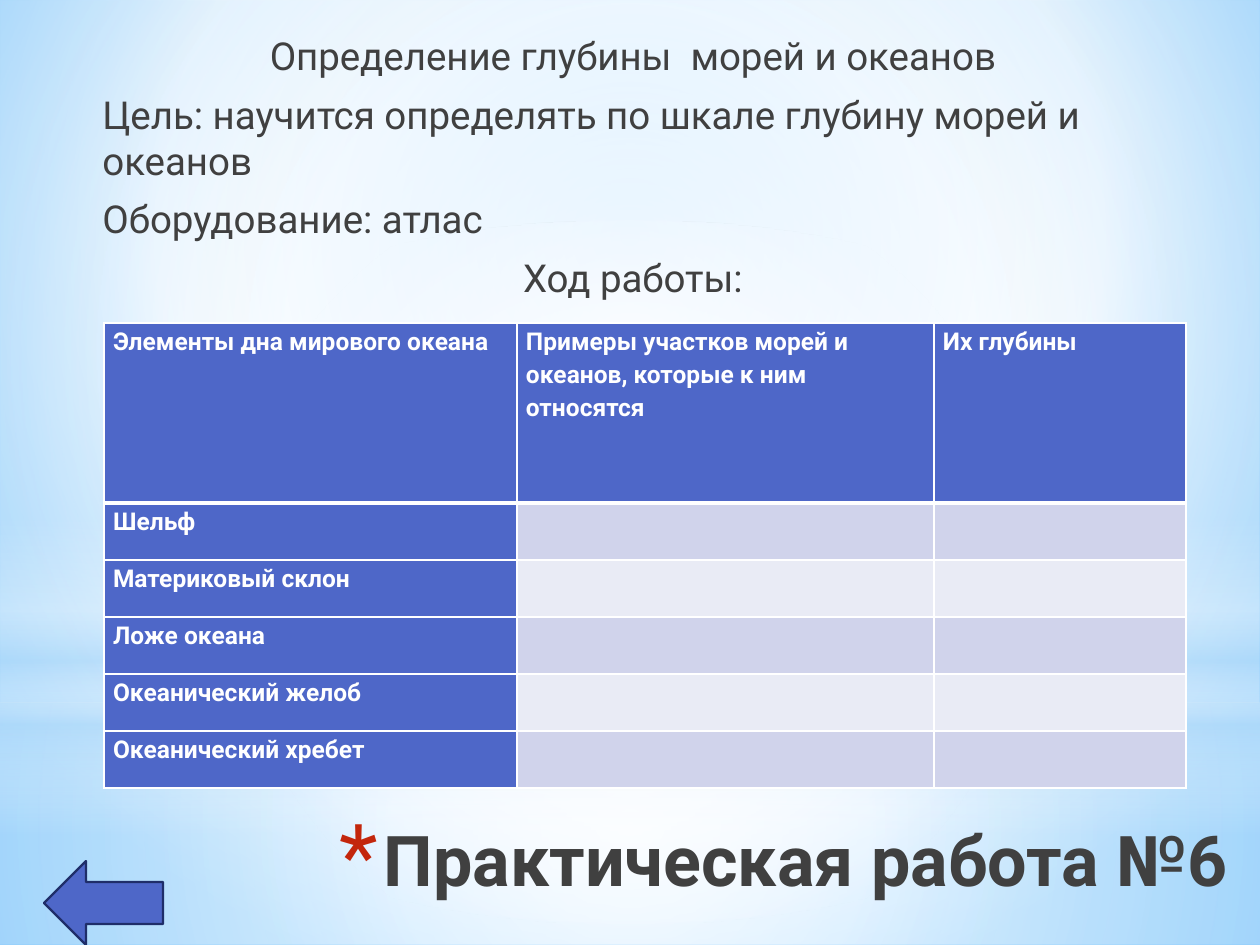
"""Build the slide of practical work No. 6 on the depth of seas and oceans."""
from pptx import Presentation
from pptx.dml.color import RGBColor
from pptx.enum.shapes import MSO_SHAPE
from pptx.enum.text import MSO_ANCHOR, PP_ALIGN
from pptx.oxml import parse_xml
from pptx.oxml.ns import nsdecls, qn
from pptx.util import Pt

RECTANGLE, OVAL, LEFT_ARROW = MSO_SHAPE.RECTANGLE, MSO_SHAPE.OVAL, MSO_SHAPE.LEFT_ARROW
LEFT, CENTER, RIGHT = PP_ALIGN.LEFT, PP_ALIGN.CENTER, PP_ALIGN.RIGHT
TOP = MSO_ANCHOR.TOP
PX = 914400 / 126
COLORS = {
    "white": "FFFFFF", "haze": "B4DCFA", "sky": "9ED5FF", "deep sky": "5BB9FF",
    "text": "404040", "asterisk": "C3260C", "accent": "4E67C8", "outline": "1F2E69",
    "odd band": "D0D3EB", "even band": "E9EBF5",
}
CENTERED = (50, 50, 50, 50)


def apply_gradient(fill, element, stops, focus):
    """Give a fill a circular gradient, or a vertical one when focus is None."""
    fill.gradient()
    stop_xml = "".join(
        f'<a:gs pos="{position * 1000}"><a:srgbClr val="{COLORS[color]}">'
        f'<a:alpha val="{alpha * 1000}"/></a:srgbClr></a:gs>'
        for position, color, alpha in stops)
    if focus:
        sides = " ".join(f'{side}="{value * 1000}"' for side, value in zip("ltrb", focus))
        direction = f'<a:path path="circle"><a:fillToRect {sides}/></a:path>'
    else:
        direction = '<a:lin ang="5400000" scaled="0"/>'
    gradient = element.find(".//" + qn("a:gradFill"))
    gradient.getparent().replace(gradient, parse_xml(
        f'<a:gradFill {nsdecls("a")} rotWithShape="1"><a:gsLst>{stop_xml}</a:gsLst>'
        f'{direction}</a:gradFill>'))


def write(paragraph, text, color, **formats):
    """Add a run of text in the slide font."""
    font = paragraph.add_run().font
    paragraph.runs[0].text = text
    for name, value in {"name": "Roboto", **formats}.items():
        setattr(font, name, value)
    font.color.rgb = RGBColor.from_string(COLORS[color])


presentation = Presentation()
presentation.slide_width, presentation.slide_height = round(1260 * PX), round(945 * PX)
slide = presentation.slides.add_slide(presentation.slide_layouts[6])
apply_gradient(slide.background.fill, slide.element,
               [(0, "sky", 100), (60, "white", 100), (100, "deep sky", 100)], (20, 10, 20, 60))

layers = [
    (RECTANGLE, (0, 703, 1260, 242),
     [(0, "white", 91), (37, "white", 76), (100, "haze", 79)], CENTERED),
    (RECTANGLE, (0, 0, 1260, 703),
     [(0, "white", 89), (48, "white", 62), (100, "haze", 79)], CENTERED),
    (RECTANGLE, (0, 519, 1260, 315),
     [(0, "white", 0), (29, "white", 30), (45, "haze", 40),
      (55, "white", 26), (65, "haze", 60), (100, "white", 0)], None),
    (OVAL, (0, 221, 1260, 703), [(0, "white", 100), (56, "white", 0)], CENTERED),
]
for kind, box, stops, focus in layers:
    shape = slide.shapes.add_shape(kind, *(round(length * PX) for length in box))
    shape.shadow.inherit = False
    shape.line.fill.background()
    apply_gradient(shape.fill, shape.element, stops, focus)

title = slide.shapes.add_textbox(*(round(length * PX) for length in (154, 810, 1086, 158)))
title.text_frame.word_wrap = True
title.text_frame.vertical_anchor = TOP
paragraph = title.text_frame.paragraphs[0]
properties = paragraph._p.get_or_add_pPr()
properties.set("marL", str(round(44 * PX)))
properties.set("indent", str(round(-44 * PX)))
for bullet in (f'<a:buClr {nsdecls("a")}><a:srgbClr val="{COLORS["asterisk"]}"/></a:buClr>',
               f'<a:buSzPct {nsdecls("a")} val="128000"/>',
               f'<a:buFont {nsdecls("a")} typeface="Roboto"/>',
               f'<a:buChar {nsdecls("a")} char="*"/>'):
    properties.append(parse_xml(bullet))
paragraph.alignment = RIGHT
write(paragraph, "Практическая работа №6", "text", size=Pt(40), bold=True)

body = slide.shapes.add_textbox(*(round(length * PX) for length in (84, 26, 1092, 774)))
body.text_frame.word_wrap = True
body_lines = [
    ("Определение глубины  морей и океанов", CENTER),
    ("Цель: научится определять по шкале глубину морей и океанов", LEFT),
    ("Оборудование: атлас", LEFT),
    ("Ход работы:", CENTER),
]
for index, (text, alignment) in enumerate(body_lines):
    paragraph = body.text_frame.add_paragraph() if index else body.text_frame.paragraphs[0]
    paragraph._p.get_or_add_pPr().set("marL", str(round(6 * PX)))
    spacing = {"alignment": alignment, "space_before": Pt(4 if index else 0),
               "space_after": Pt(3)}
    for name, value in spacing.items():
        setattr(paragraph, name, value)
    write(paragraph, text, "text", size=Pt(22))

headers = ["Элементы дна мирового океана",
           "Примеры участков морей и океанов, которые к ним относятся", "Их глубины"]
elements = ["Шельф", "Материковый склон", "Ложе океана", "Океанический желоб",
            "Океанический хребет"]
rows = [headers] + [[element, "", ""] for element in elements]
table = slide.shapes.add_table(
    len(rows), len(headers),
    *(round(length * PX) for length in (104, 323, 1082, 465))).table
for column, width in zip(table.columns, (413, 417, 252)):
    column.width = round(width * PX)
for row_index, row in enumerate(rows):
    table.rows[row_index].height = round((57 if row_index else 180) * PX)
    for column_index, text in enumerate(row):
        cell = table.cell(row_index, column_index)
        heavy_side = {0: "B", 1: "T"}.get(row_index)
        for side in "LRTB":
            width = Pt(3 if side == heavy_side else 1)
            cell._tc.get_or_add_tcPr().append(parse_xml(
                f'<a:ln{side} {nsdecls("a")} w="{width}"><a:solidFill>'
                f'<a:srgbClr val="{COLORS["white"]}"/></a:solidFill></a:ln{side}>'))
        band = "odd band" if row_index % 2 else "even band"
        cell.fill.solid()
        cell.fill.fore_color.rgb = RGBColor.from_string(COLORS["accent" if text else band])
        if text:
            margins = {"margin_left": 9, "margin_right": 9, "margin_top": 0, "margin_bottom": 0}
            for name, value in margins.items():
                setattr(cell, name, round(value * PX))
            paragraph = cell.text_frame.paragraphs[0]
            paragraph.line_spacing = 1.15
            write(paragraph, text, "white", size=Pt(14), bold=True)

arrow = slide.shapes.add_shape(LEFT_ARROW, *(round(length * PX) for length in (44, 861, 119, 84)))
arrow.shadow.inherit = False
arrow.fill.solid()
arrow.fill.fore_color.rgb = RGBColor.from_string(COLORS["accent"])
arrow.line.color.rgb = RGBColor.from_string(COLORS["outline"])
arrow.line.width = Pt(1.25)

presentation.save("out.pptx")
